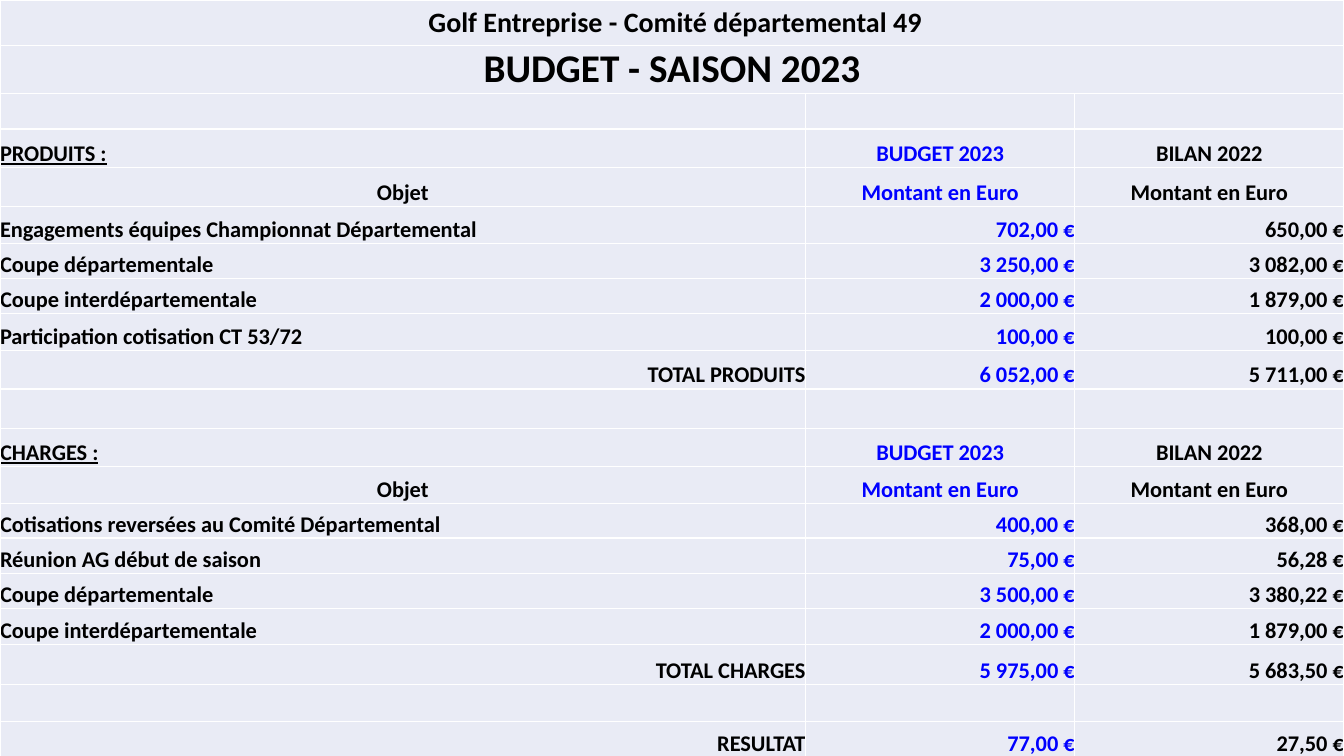
from lxml.etree import SubElement
from pptx import Presentation
from pptx.dml.color import RGBColor
from pptx.enum.text import MSO_ANCHOR as ANCHOR, PP_ALIGN as ALIGN
from pptx.oxml.ns import qn
from pptx.util import Inches, Pt

BLACK = RGBColor(0x00, 0x00, 0x00)
BLUE = RGBColor(0x00, 0x00, 0xFF)
WHITE = RGBColor(0xFF, 0xFF, 0xFF)
PALE = RGBColor(0xE9, 0xEB, 0xF5)
FONT = "Calibri"

COL_WIDTHS = [7.99, 2.67, 2.67]
ROW_HEIGHTS = [0.45, 0.48, 0.35, 0.38, 0.39, 0.37, 0.34, 0.35, 0.37, 0.38,
               0.39, 0.38, 0.37, 0.34, 0.35, 0.35, 0.36, 0.39, 0.37, 0.36]

TITLES = [(" Golf Entreprise - Comité départemental 49", 20),
          ("BUDGET - SAISON 2023", 28)]
PRODUCTS = [
    ("Engagements équipes Championnat Départemental", "702,00 €", "650,00 €"),
    ("Coupe départementale", "3 250,00 €", "3 082,00 €"),
    ("Coupe interdépartementale", "2 000,00 €", "1 879,00 €"),
    ("Participation cotisation CT 53/72", "100,00 €", "100,00 €"),
]
PRODUCTS_TOTAL = ("TOTAL PRODUITS", "6 052,00 €", "5 711,00 €")
CHARGES = [
    ("Cotisations reversées au Comité Départemental", "400,00 €", "368,00 €"),
    ("Réunion AG début de saison", "75,00 €", "56,28 €"),
    ("Coupe départementale", "3 500,00 €", "3 380,22 €"),
    ("Coupe interdépartementale", "2 000,00 €", "1 879,00 €"),
]
CHARGES_TOTAL = ("TOTAL CHARGES", "5 975,00 €", "5 683,50 €")
RESULT = ("RESULTAT", "77,00 €", "27,50 €")


def write(cell, text, size=16, color=BLACK, align=ALIGN.LEFT,
          anchor=ANCHOR.BOTTOM, underline=None):
    cell.vertical_anchor = anchor
    p = cell.text_frame.paragraphs[0]
    p.alignment = align
    r = p.add_run()
    r.text = text
    r.font.name, r.font.size, r.font.bold = FONT, Pt(size), True
    r.font.color.rgb = color
    r.font.underline = underline


def style_cell(cell):
    cell.margin_left = cell.margin_right = 0
    cell.margin_top = cell.margin_bottom = 0
    tc_pr = cell._tc.get_or_add_tcPr()
    for side in ("a:lnL", "a:lnR", "a:lnT", "a:lnB"):
        ln = SubElement(tc_pr, qn(side), w=str(Pt(1)))
        fill = SubElement(ln, qn("a:solidFill"))
        SubElement(fill, qn("a:srgbClr"), val=str(WHITE))
    cell.fill.solid()
    cell.fill.fore_color.rgb = PALE


def add_budget_table(s):
    table = s.shapes.add_table(
        len(ROW_HEIGHTS), len(COL_WIDTHS), 0, 0,
        Inches(sum(COL_WIDTHS)), Inches(sum(ROW_HEIGHTS))).table
    table.first_row = table.horz_banding = False
    for col, width in zip(table.columns, COL_WIDTHS):
        col.width = Inches(width)
    for row, height in zip(table.rows, ROW_HEIGHTS):
        row.height = Inches(height)
    for cell in table.iter_cells():
        style_cell(cell)
    return table


def fill_titles(table):
    for row, (text, size) in enumerate(TITLES):
        cell = table.cell(row, 0)
        cell.merge(table.cell(row, len(COL_WIDTHS) - 1))
        write(cell, text, size=size, align=ALIGN.CENTER, anchor=ANCHOR.MIDDLE)


def fill_row(table, row, texts, label_align, value_align, underline=None):
    label, budget, actual = texts
    write(table.cell(row, 0), label, align=label_align, underline=underline)
    write(table.cell(row, 1), budget, color=BLUE, align=value_align)
    write(table.cell(row, 2), actual, align=value_align)


def fill_section(table, top, heading, items, total):
    fill_row(table, top, (heading, "BUDGET 2023", "BILAN 2022"),
             ALIGN.LEFT, ALIGN.CENTER, underline=True)
    fill_row(table, top + 1, ("Objet", "Montant en Euro", "Montant en Euro"),
             ALIGN.CENTER, ALIGN.CENTER)
    for row, item in enumerate(items, top + 2):
        fill_row(table, row, item, ALIGN.LEFT, ALIGN.RIGHT)
    fill_row(table, top + 2 + len(items), total, ALIGN.RIGHT, ALIGN.RIGHT)


def main():
    prs = Presentation()
    prs.slide_width, prs.slide_height = Inches(13.33), Inches(7.5)
    s = prs.slides.add_slide(prs.slide_layouts[6])

    # Table grid and titles
    table = add_budget_table(s)
    fill_titles(table)

    # Income, expenses and result
    fill_section(table, 3, "PRODUITS :", PRODUCTS, PRODUCTS_TOTAL)
    fill_section(table, 11, "CHARGES :", CHARGES, CHARGES_TOTAL)
    fill_row(table, len(ROW_HEIGHTS) - 1, RESULT, ALIGN.RIGHT, ALIGN.RIGHT)

    prs.save("out.pptx")


if __name__ == "__main__":
    main()
